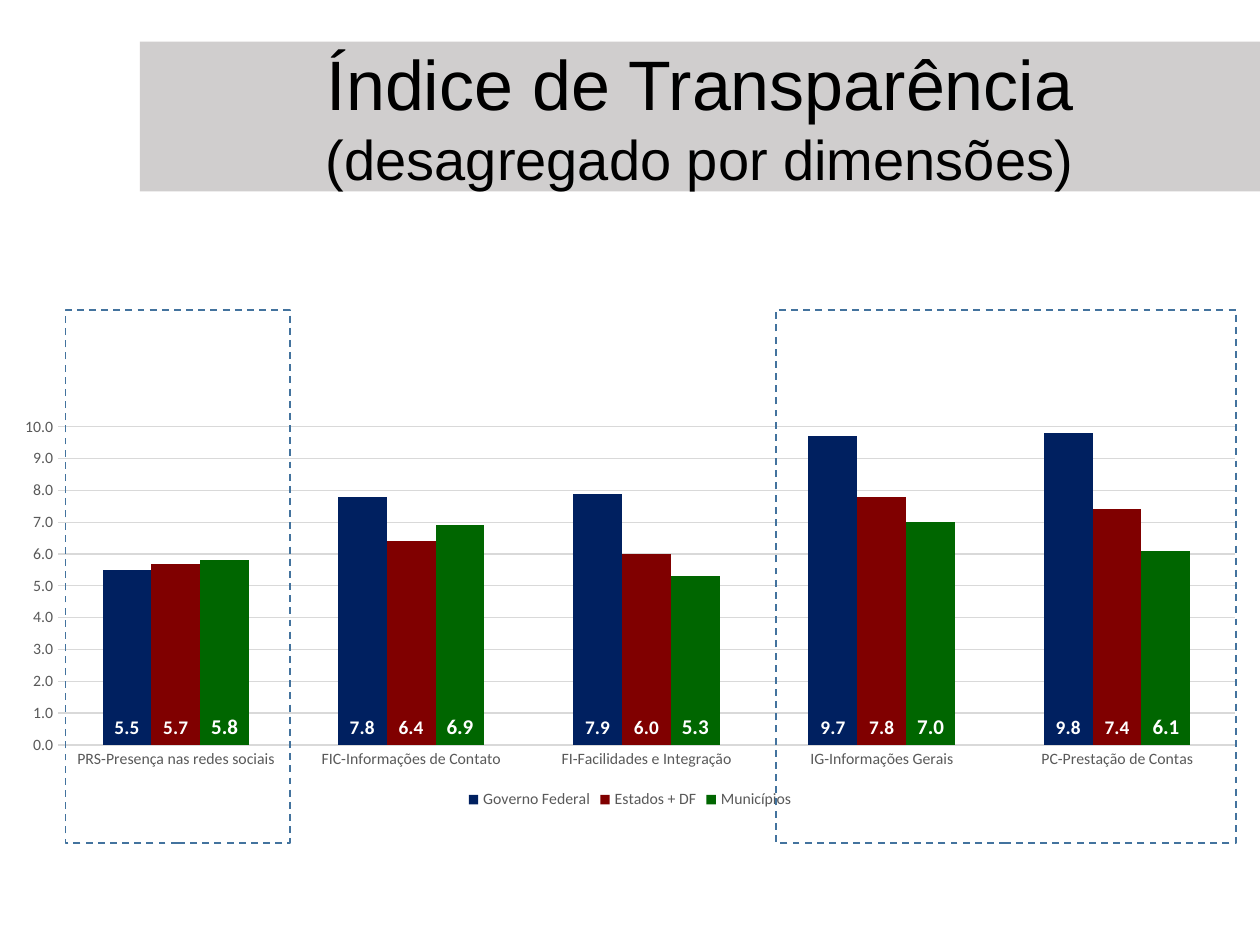
from dataclasses import dataclass

from pptx import Presentation
from pptx.chart.data import CategoryChartData
from pptx.dml.color import RGBColor
from pptx.enum.chart import XL_CHART_TYPE, XL_LABEL_POSITION, XL_LEGEND_POSITION, XL_TICK_MARK
from pptx.enum.dml import MSO_LINE
from pptx.enum.shapes import MSO_SHAPE
from pptx.enum.text import MSO_ANCHOR, MSO_AUTO_SIZE, PP_ALIGN
from pptx.util import Inches, Pt

WIDE, HIGH = Inches(10), Inches(7.5)
HUES = {
    "navy": "002060", "wine": "800000", "green": "006600", "band": "D0CECE",
    "frame": "43739E", "grid": "D9D9D9", "label": "595959",
    "black": "000000", "white": "FFFFFF",
}
CATS = [
    "PRS-Presença nas redes sociais", "FIC-Informações de Contato",
    "FI-Facilidades e Integração", "IG-Informações Gerais", "PC-Prestação de Contas",
]


@dataclass
class Level:
    name: str
    hue: str
    size: int
    vals: list


@dataclass
class Frame:
    left: float
    width: float


LEVELS = [
    Level("Governo Federal", "navy", 11, [5.5, 7.8, 7.9, 9.7, 9.8]),
    Level("Estados + DF", "wine", 11, [5.7, 6.4, 6, 7.8, 7.4]),
    Level("Municípios", "green", 12, [5.8, 6.9, 5.3, 7, 6.1]),
]
FRAMES = [Frame(6.16, 3.65), Frame(0.52, 1.78)]


def tint(name):
    return RGBColor.from_string(HUES[name])


def style(font, size, hue, face="Calibri", bold=False):
    font.size, font.name, font.bold = Pt(size), face, bold
    font.color.rgb = tint(hue)


def rule(line, hue, width):
    line.color.rgb = tint(hue)
    line.width = Pt(width)


def add_title(slide):
    title = slide.shapes.title
    title.left, title.top = Inches(1.11), Inches(0.33)
    title.width, title.height = Inches(8.89), Inches(1.19)
    title.fill.solid()
    title.fill.fore_color.rgb = tint("band")
    text = title.text_frame
    text.text = "Índice de Transparência\n(desagregado por dimensões)"
    text.word_wrap = True
    text.auto_size = MSO_AUTO_SIZE.NONE
    text.vertical_anchor = MSO_ANCHOR.MIDDLE
    for para, size in zip(text.paragraphs, (40, 32)):
        para.alignment = PP_ALIGN.CENTER
        style(para.runs[0].font, size, "black", "Arial")


def add_bars(slide):
    data = CategoryChartData(number_format="0.0")
    data.categories = CATS
    for level in LEVELS:
        data.add_series(level.name, level.vals)
    chart = slide.shapes.add_chart(
        XL_CHART_TYPE.COLUMN_CLUSTERED, 0, Inches(3.25), WIDE, Inches(3.21), data
    ).chart
    style(chart.font, 10, "black")
    chart.has_title = False
    chart.has_legend = True
    chart.legend.position = XL_LEGEND_POSITION.BOTTOM
    chart.legend.include_in_layout = False
    style(chart.legend.font, 9, "label")
    for axis in (chart.category_axis, chart.value_axis):
        axis.major_tick_mark = axis.minor_tick_mark = XL_TICK_MARK.NONE
        style(axis.tick_labels.font, 9, "label")
    rule(chart.category_axis.format.line, "grid", 0.75)
    scale = chart.value_axis
    scale.minimum_scale, scale.maximum_scale, scale.major_unit = 0, 10, 1
    scale.format.line.fill.background()
    rule(scale.major_gridlines.format.line, "grid", 0.75)
    scale.tick_labels.number_format = "0.0"
    scale.tick_labels.number_format_is_linked = False
    plot = chart.plots[0]
    plot.gap_width, plot.overlap = 182, 0
    plot.vary_by_categories = False
    for bars, level in zip(plot.series, LEVELS):
        bars.format.fill.solid()
        bars.format.fill.fore_color.rgb = tint(level.hue)
        tags = bars.data_labels
        tags.show_value = True
        tags.position = XL_LABEL_POSITION.INSIDE_BASE
        tags.number_format = "0.0"
        tags.number_format_is_linked = False
        style(tags.font, level.size, "white", bold=True)


def add_frame(slide, frame: Frame):
    box = slide.shapes.add_shape(
        MSO_SHAPE.RECTANGLE, Inches(frame.left), Inches(2.46), Inches(frame.width), Inches(4.23)
    )
    box.shadow.inherit = False
    box.fill.background()
    rule(box.line, "frame", 1)
    box.line.dash_style = MSO_LINE.DASH


def main():
    """Build the transparency index slide."""
    deck = Presentation()
    deck.slide_width, deck.slide_height = WIDE, HIGH
    slide = deck.slides.add_slide(deck.slide_layouts[5])
    add_bars(slide)
    add_title(slide)
    for frame in FRAMES:
        add_frame(slide, frame)
    deck.save("out.pptx")


if __name__ == "__main__":
    main()
